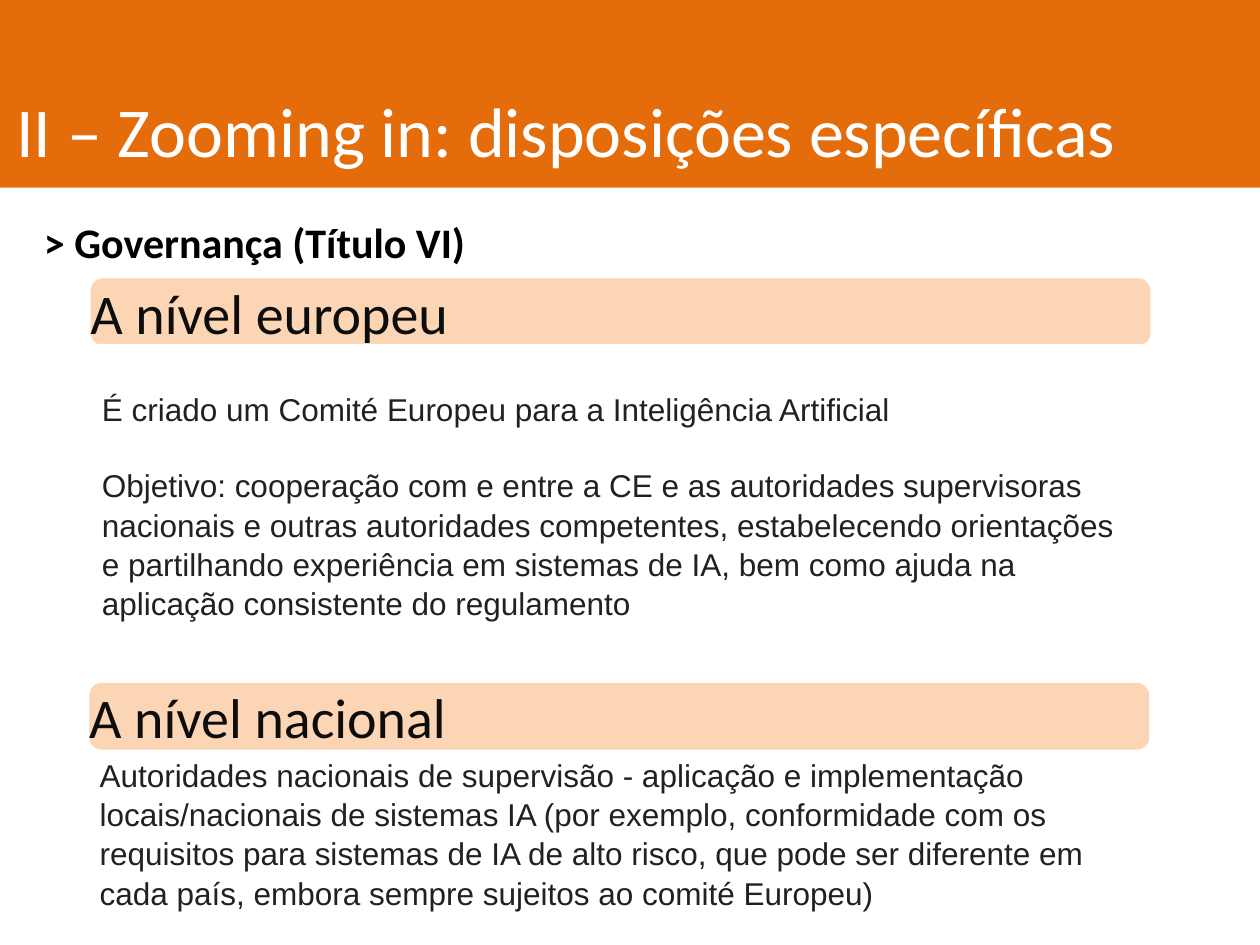
import pptx
import pptx.util
import pptx.dml.color
import pptx.enum.shapes
import pptx.enum.text

Inches, Pt = pptx.util.Inches, pptx.util.Pt
ALIGN, ANCHOR = pptx.enum.text.PP_ALIGN, pptx.enum.text.MSO_ANCHOR
SHAPE = pptx.enum.shapes.MSO_SHAPE
COLORS = {"header": "E46C0A", "band": "FCD5B5", "white": "FFFFFF",
          "black": "000000", "heading": "0D0D0D", "body": "202124"}


def rgb(name):
    return pptx.dml.color.RGBColor.from_string(COLORS[name])


def write(sp, paragraphs, font, size, color, margins, anchor=ANCHOR.TOP, bold=False, gap=0):
    """Fill a shape with left-aligned text; margins are left, top, right, bottom in inches."""
    tf = sp.text_frame
    tf.word_wrap = True
    tf.vertical_anchor = anchor
    tf.margin_left, tf.margin_top, tf.margin_right, tf.margin_bottom = map(Inches, margins)
    tf.text = "\n".join(paragraphs)
    for i, p in enumerate(tf.paragraphs):
        p.alignment = ALIGN.LEFT
        if i:
            p.space_before = Pt(gap)
        if font == "Arial":
            p.line_spacing = 1.04
        for r in p.runs:
            r.font.name, r.font.size, r.font.bold = font, Pt(size), bold
            r.font.color.rgb = rgb(color)


prs = pptx.Presentation()
prs.slide_width, prs.slide_height = Inches(10), Inches(7.5)
s = prs.slides.add_slide(prs.slide_layouts[5])

title = s.shapes.title
title.left, title.top, title.width, title.height = 0, 0, prs.slide_width, Inches(1.49)
title.fill.solid()
title.fill.fore_color.rgb = rgb("header")
write(title, ["II – Zooming in: disposições específicas"], "Calibri", 40, "white",
      (0.13, 0, 0, 0.13), ANCHOR.BOTTOM)

topic = s.shapes.add_textbox(Inches(0.25), Inches(1.67), Inches(9.08), Inches(0.5))
write(topic, ["> Governança (Título VI)"], "Calibri", 24, "black", (0.1, 0.05, 0.1, 0.05), bold=True)

# Each level: band text, band left and top, body box, body margins, anchor, paragraphs
levels = [
    ("A nível europeu", (0.72, 2.21), (0.71, 2.73, 8.42, 2.22), (0.1, 0.35, 0.1, 0.05), ANCHOR.TOP,
     ["É criado um Comité Europeu para a Inteligência Artificial",
      "Objetivo: cooperação com e entre a CE e as autoridades supervisoras nacionais e outras "
      "autoridades competentes, estabelecendo orientações e partilhando experiência em sistemas "
      "de IA, bem como ajuda na aplicação consistente do regulamento"]),
    ("A nível nacional", (0.71, 5.42), (0.79, 6.02, 8.25, 1.18), (0, 0, 0, 0), ANCHOR.MIDDLE,
     ["Autoridades nacionais de supervisão - aplicação e implementação locais/nacionais de "
      "sistemas IA (por exemplo, conformidade com os requisitos para sistemas de IA de alto "
      "risco, que pode ser diferente em cada país, embora sempre sujeitos ao comité Europeu)"]),
]
for heading, corner, box, margins, anchor, paragraphs in levels:
    band = s.shapes.add_shape(SHAPE.ROUNDED_RECTANGLE, *map(Inches, (*corner, 8.41, 0.53)))
    band.adjustments[0] = 0.18
    body = s.shapes.add_shape(SHAPE.RECTANGLE, *map(Inches, box))
    for sp, color in ((band, "band"), (body, "white")):
        sp.shadow.inherit = False
        sp.fill.solid()
        sp.fill.fore_color.rgb = rgb(color)
        sp.line.fill.background()
    write(band, [heading], "Calibri", 32, "heading", (-0.03, -0.03, 0, 0))
    write(body, paragraphs, "Arial", 18, "body", margins, anchor, gap=21.5)

prs.save("out.pptx")
